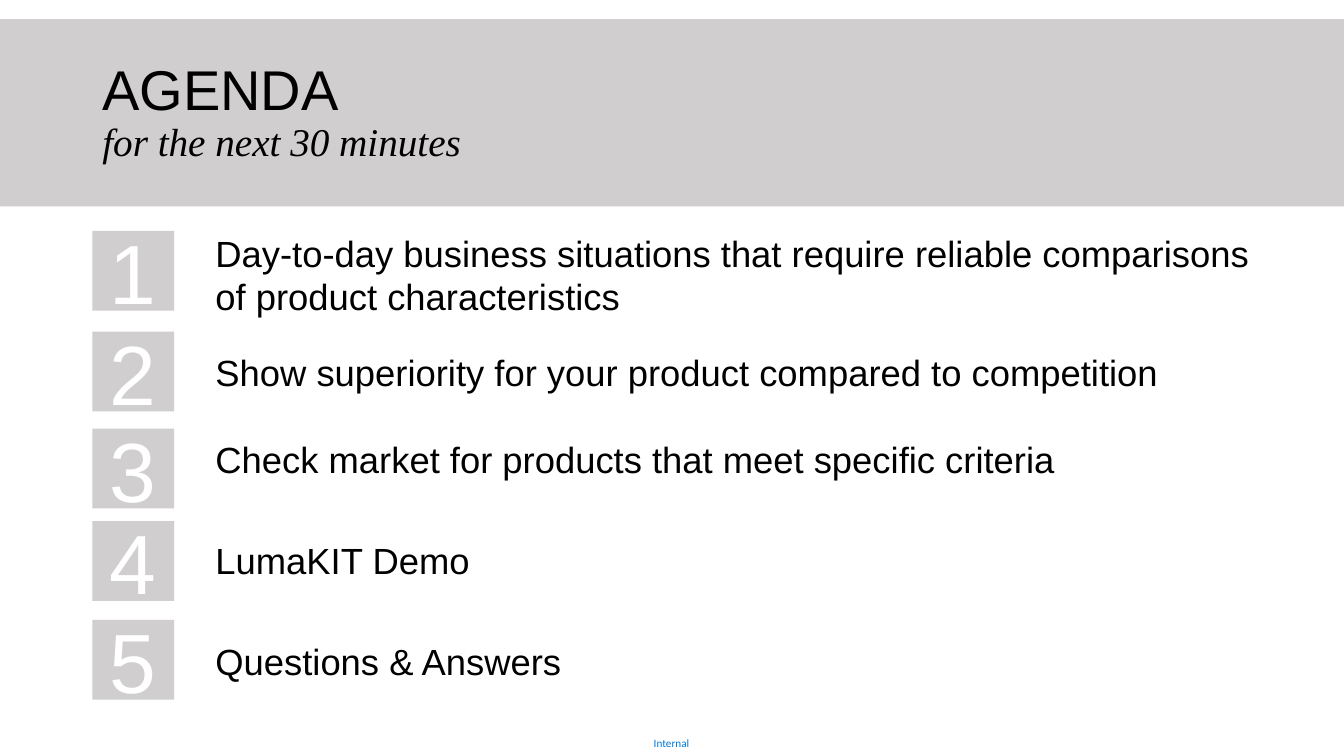
import pptx
import pptx.util
import pptx.dml.color
import pptx.enum.shapes
import pptx.enum.text

Cm, Pt = pptx.util.Cm, pptx.util.Pt
ALIGN = pptx.enum.text.PP_ALIGN
MIDDLE = pptx.enum.text.MSO_ANCHOR.MIDDLE
GREY = "D0CECE"


def add_run(paragraph, text, size, color="000000", font="Arial"):
    run = paragraph.add_run()
    run.text = text
    run.font.size = Pt(size)
    run.font.name = font
    run.font.color.rgb = pptx.dml.color.RGBColor.from_string(color)
    return run


def add_grey_rectangle(left, top, width, height):
    rectangle = slide.shapes.add_shape(
        pptx.enum.shapes.MSO_SHAPE.RECTANGLE, Cm(left), Cm(top), Cm(width), Cm(height))
    rectangle.shadow.inherit = False
    rectangle.fill.solid()
    rectangle.fill.fore_color.rgb = pptx.dml.color.RGBColor.from_string(GREY)
    rectangle.line.fill.background()
    return rectangle


deck = pptx.Presentation()
deck.slide_width = Cm(33.87)
deck.slide_height = Cm(19.05)
slide = deck.slides.add_slide(deck.slide_layouts[6])

# Classification footer
classification = slide.shapes.add_textbox(Cm(16.15), Cm(18.42), Cm(1.55), Cm(0.63)).text_frame
classification.margin_left = classification.margin_right = 0
classification.margin_top = classification.margin_bottom = 0
classification.vertical_anchor = MIDDLE
classification.word_wrap = True
classification.paragraphs[0].alignment = ALIGN.CENTER
add_run(classification.paragraphs[0], "Internal", 8, "0078D7", "Calibri")

# Heading band
add_grey_rectangle(0, 0.48, 33.87, 4.72)
heading = slide.shapes.add_textbox(Cm(2.33), Cm(1.02), Cm(29.21), Cm(3.68)).text_frame
heading.word_wrap = True
heading.vertical_anchor = MIDDLE
heading_lines = heading.paragraphs[0]
heading_lines.line_spacing = 0.9
add_run(heading_lines, "AGENDA", 40)
heading_lines.add_line_break()
subtitle = add_run(heading_lines, "for the next 30 minutes", 28, font="Times New Roman")
subtitle.font.italic = True

# Agenda: top of the number box, top of the topic, topic lines
agenda = [
    (5.82, 5.69, ["Day-to-day business situations that require reliable comparisons",
                  "of product characteristics"]),
    (8.36, 8.71, ["Show superiority for your product compared to competition"]),
    (10.8, 10.9, ["Check market for products that meet specific criteria"]),
    (13.13, 13.44, ["LumaKIT Demo"]),
    (15.62, 15.98, ["Questions & Answers"]),
]
for number, (box_top, topic_top, lines) in enumerate(agenda, start=1):
    number_text = add_grey_rectangle(2.33, box_top, 2.06, 2.01).text_frame
    number_text.vertical_anchor = MIDDLE
    number_text.paragraphs[0].alignment = ALIGN.CENTER
    add_run(number_text.paragraphs[0], str(number), 60, "FFFFFF")

    topic_height = 0.25 + 1.12 * len(lines)
    topic = slide.shapes.add_textbox(Cm(5.18), Cm(topic_top), Cm(28.5), Cm(topic_height)).text_frame
    topic.word_wrap = True
    for index, line in enumerate(lines):
        if index:
            topic.paragraphs[0].add_line_break()
        add_run(topic.paragraphs[0], line, 26)

deck.save("out.pptx")
